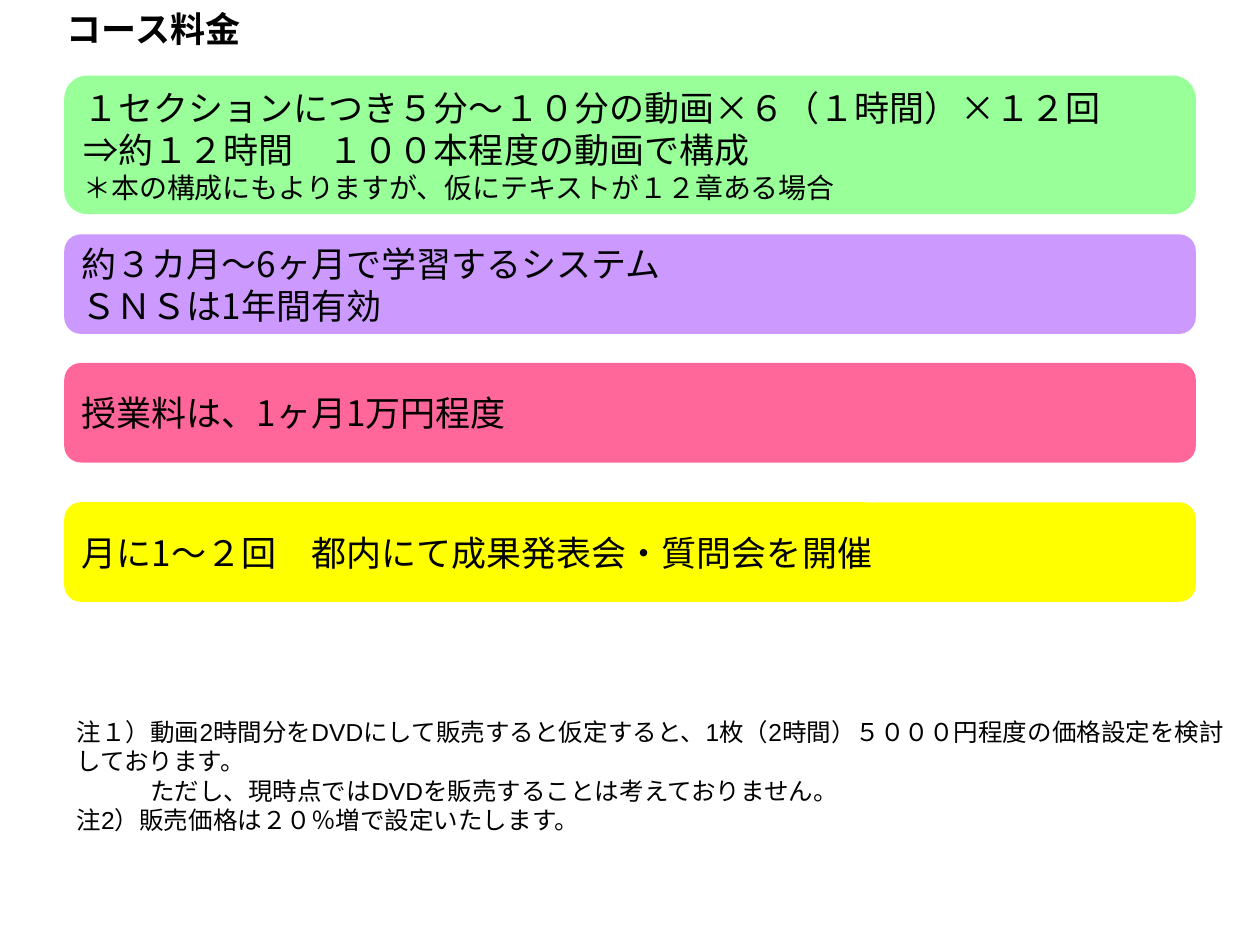
from lxml.etree import SubElement
from pptx import Presentation
from pptx.dml.color import RGBColor
from pptx.enum.shapes import MSO_SHAPE
from pptx.enum.text import MSO_ANCHOR, PP_ALIGN
from pptx.oxml.ns import qn
from pptx.util import Pt

BLACK = RGBColor(0x00, 0x00, 0x00)
GREEN = RGBColor(0x99, 0xFF, 0x99)
PURPLE = RGBColor(0xCC, 0x99, 0xFF)
PINK = RGBColor(0xFF, 0x66, 0x99)
YELLOW = RGBColor(0xFF, 0xFF, 0x00)

CJK = "Noto Sans CJK JP"
LEFT, PANEL_W, PANEL_H = 36.7, 646.6, 56.9

# top, height, colour, lines of (text, size)
PANELS = [
    (43.2, 79.2, GREEN, [
        ("１セクションにつき５分～１０分の動画×６（１時間）×１２回", 20),
        ("⇒約１２時間　１００本程度の動画で構成", 20),
        ("＊本の構成にもよりますが、仮にテキストが１２章ある場合", 16)]),
    (133.9, PANEL_H, PURPLE, [
        ("約３カ月～6ヶ月で学習するシステム", 20),
        ("ＳＮＳは1年間有効", 20)]),
    (207.4, PANEL_H, PINK, [("授業料は、1ヶ月1万円程度", 20)]),
    (287.0, PANEL_H, YELLOW, [("月に1～２回　都内にて成果発表会・質問会を開催", 20)]),
]

# text, left indent
NOTES = [
    ("注１）動画2時間分をDVDにして販売すると仮定すると、1枚（2時間）"
     "５０００円程度の価格設定を検討しております。", 0),
    ("ただし、現時点ではDVDを販売することは考えておりません。", 42),
    ("注2）販売価格は２０％増で設定いたします。", 0),
]


def write_paragraph(p, text, size, font, bold=False):
    p.text = text
    p.alignment = PP_ALIGN.LEFT
    for r in p.runs:
        r.font.name = font
        r.font.size = Pt(size)
        r.font.bold = bold
        r.font.color.rgb = BLACK
        SubElement(r.font._element, qn("a:ea"), typeface=CJK)


def paragraphs(tf, count):
    for _ in range(count - 1):
        tf.add_paragraph()
    return tf.paragraphs


def add_title(s, text):
    sp = s.shapes.title
    sp.left, sp.top, sp.width, sp.height = Pt(31), Pt(0), Pt(648), Pt(33)
    sp.text_frame.vertical_anchor = MSO_ANCHOR.MIDDLE
    write_paragraph(sp.text_frame.paragraphs[0], text, 20, "Calibri", bold=True)


def add_panel(s, top, height, color, lines):
    sp = s.shapes.add_shape(MSO_SHAPE.ROUNDED_RECTANGLE,
                            Pt(LEFT), Pt(top), Pt(PANEL_W), Pt(height))
    sp.shadow.inherit = False
    sp.fill.solid()
    sp.fill.fore_color.rgb = color
    sp.line.fill.background()
    tf = sp.text_frame
    tf.word_wrap = True
    tf.vertical_anchor = MSO_ANCHOR.MIDDLE
    for p, (text, size) in zip(paragraphs(tf, len(lines)), lines):
        write_paragraph(p, text, size, CJK)


def add_notes(s, notes):
    sp = s.shapes.add_textbox(Pt(LEFT), Pt(406), Pt(683.3), Pt(58))
    tf = sp.text_frame
    tf.word_wrap = True
    for p, (text, indent) in zip(paragraphs(tf, len(notes)), notes):
        write_paragraph(p, text, 14, "Arial")
        p._p.get_or_add_pPr().set("marL", str(Pt(indent)))


def main():
    prs = Presentation()
    prs.slide_width, prs.slide_height = Pt(720), Pt(540)
    s = prs.slides.add_slide(prs.slide_layouts[5])

    # Heading
    add_title(s, "コース料金")
    # Coloured panels
    for panel in PANELS:
        add_panel(s, *panel)
    # Footnotes
    add_notes(s, NOTES)

    prs.save("out.pptx")


if __name__ == "__main__":
    main()
